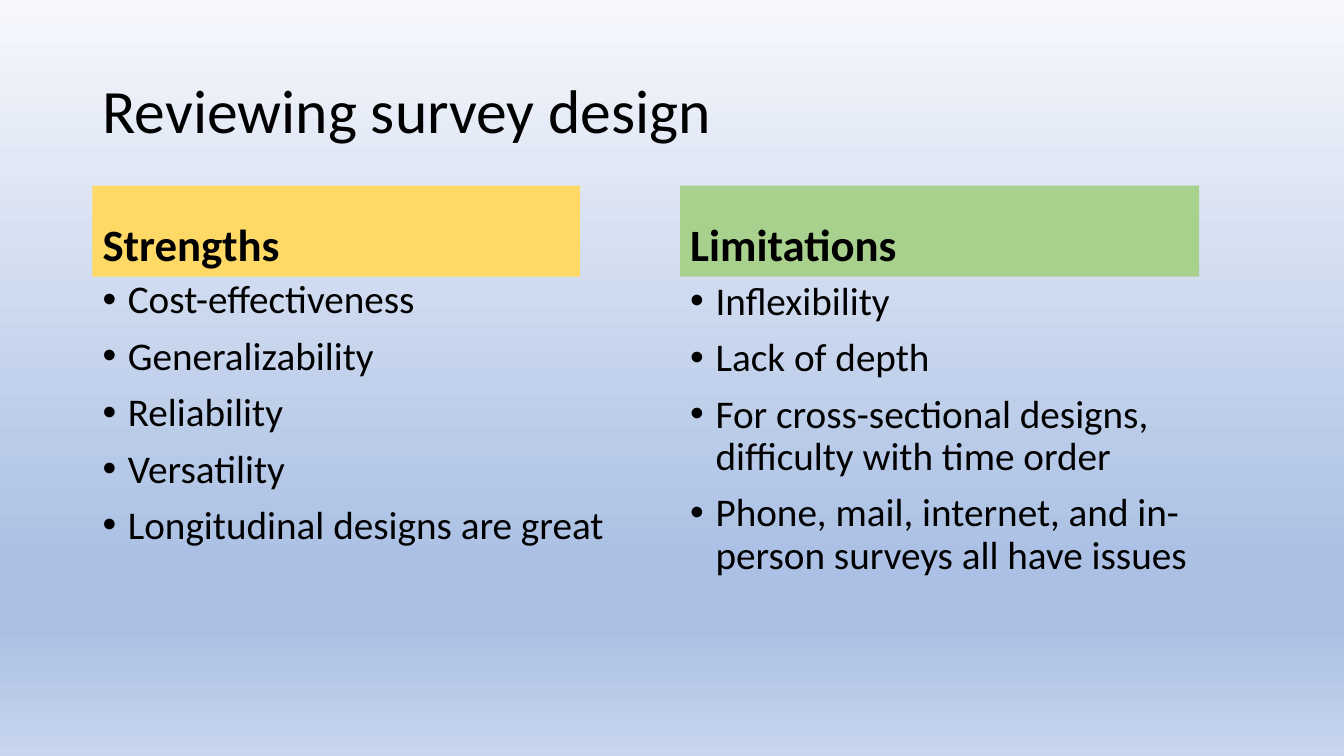
from dataclasses import dataclass

from lxml.etree import SubElement as Sub
from pptx import Presentation
from pptx.dml.color import RGBColor as Rgb
from pptx.enum.text import MSO_ANCHOR as Anchor, MSO_AUTO_SIZE as Fit, PP_ALIGN as Align
from pptx.oxml.ns import qn
from pptx.util import Cm, Pt


@dataclass(frozen=True)
class Theme:
    font: str = "Calibri"
    ink: str = "000000"
    gold: str = "FFD966"
    green: str = "A9D18E"
    sky: tuple = ((0, "F6F8FC"), (74, "ABC0E4"), (83, "ABC0E4"), (100, "C7D5ED"))
    title: int = 44
    head: int = 32
    body: int = 28


THEME = Theme()
COMPARE = 4  # the template's two-column comparison layout
LEFT, RIGHT = 2.33, 17.14


def paint(slide):
    """Fill the background with the vertical sky gradient."""
    fill = slide.background.fill
    fill.gradient()
    fill.gradient_angle = 270
    stops = next(slide.element.iter(qn("a:gsLst")))
    for stop in list(stops):
        stops.remove(stop)
    for pos, tone in THEME.sky:
        stop = Sub(stops, qn("a:gs"), pos=str(pos * 1000))
        Sub(stop, qn("a:srgbClr"), val=tone)


def place(shape, left, top, width, height):
    shape.left, shape.top = Cm(left), Cm(top)
    shape.width, shape.height = Cm(width), Cm(height)


def write(shape, lines, size, anchor, bold=False, gap=10):
    """Put one paragraph per line into a placeholder."""
    frame = shape.text_frame
    frame.text = "\n".join(lines)
    frame.word_wrap = True
    frame.auto_size = Fit.NONE
    frame.vertical_anchor = anchor
    for para in frame.paragraphs:
        para.alignment = Align.LEFT
        para.line_spacing = 0.9
        para.space_before = Pt(gap)
        font = para.font
        font.name, font.size, font.bold = THEME.font, Pt(size), bold
        font.color.rgb = Rgb.from_string(THEME.ink)


def add_title(shape, text):
    place(shape, LEFT, 1.01, 29.21, 3.68)
    write(shape, [text], THEME.title, Anchor.MIDDLE, gap=0)


def add_head(shape, text, left, width, tone):
    place(shape, left, 4.68, width, 2.29)
    shape.fill.solid()
    shape.fill.fore_color.rgb = Rgb.from_string(tone)
    write(shape, [text], THEME.head, Anchor.BOTTOM, bold=True)


def add_list(shape, items, left, top, width):
    place(shape, left, top, width, 10.23)
    write(shape, items, THEME.body, Anchor.TOP)
    indent = Cm(0.64)
    for para in shape.text_frame.paragraphs:
        props = para._p.get_or_add_pPr()
        props.set("marL", str(indent))
        props.set("indent", str(-indent))
        Sub(props, qn("a:buFont"), typeface="Arial")
        Sub(props, qn("a:buChar"), char="•")
        # Bullets come before the default run settings
        props.append(props.find(qn("a:defRPr")))


def main():
    deck = Presentation()
    deck.slide_width, deck.slide_height = Cm(33.87), Cm(19.05)
    slide = deck.slides.add_slide(deck.slide_layouts[COMPARE])
    paint(slide)
    title, head1, list1, head2, list2 = slide.placeholders
    add_title(title, "Reviewing survey design")

    # Strengths column
    add_head(head1, "Strengths", LEFT, 12.29, THEME.gold)
    add_list(list1, [
        "Cost-effectiveness",
        "Generalizability",
        "Reliability",
        "Versatility",
        "Longitudinal designs are great",
    ], LEFT, 6.93, 14.33)

    # Limitations column
    add_head(head2, "Limitations", RIGHT, 13.08, THEME.green)
    add_list(list2, [
        "Inflexibility",
        "Lack of depth",
        "For cross-sectional designs, difficulty with time order",
        "Phone, mail, internet, and in-person surveys all have issues",
    ], RIGHT, 6.97, 14.4)

    deck.save("out.pptx")


if __name__ == "__main__":
    main()
